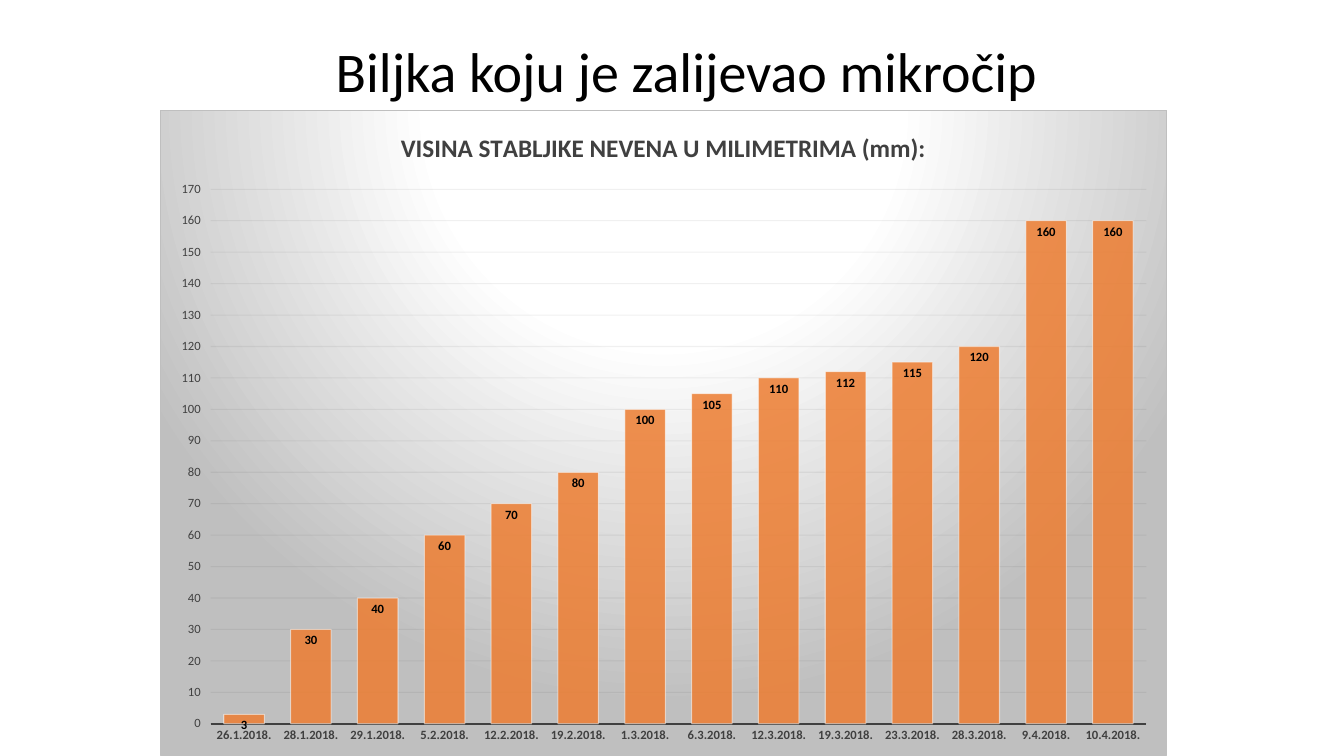
"""Build a slide with a column chart of marigold stem height by date."""
from lxml import etree
from pptx import Presentation, util as u
from pptx.chart.data import CategoryChartData
from pptx.dml.color import RGBColor
from pptx.enum import chart as ch, text
from pptx.oxml import parse_xml
from pptx.oxml.ns import nsdecls, qn

COLORS = {"ink": "000000", "label": "404040", "grid": "0D0D0D", "bar": "ED7D31",
          "white": "FFFFFF", "grey": "BFBFBF"}
HEIGHTS = {"26.1.2018.": 3, "28.1.2018.": 30, "29.1.2018.": 40, "5.2.2018.": 60,
           "12.2.2018.": 70, "19.2.2018.": 80, "1.3.2018.": 100, "6.3.2018.": 105,
           "12.3.2018.": 110, "19.3.2018.": 112, "23.3.2018.": 115, "28.3.2018.": 120,
           "9.4.2018.": 160, "10.4.2018.": 160}


class Deck:
    """Style and current slide, with lengths given as percentages of the slide."""

    def __init__(self, font):
        self.font = font
        self.prs = Presentation()
        self.prs.slide_width, self.prs.slide_height = u.Inches(13.33), u.Inches(7.5)
        self.slide = self.prs.slides.add_slide(self.prs.slide_layouts[5])

    def box(self, *percents):
        sides = (self.prs.slide_width, self.prs.slide_height) * 2
        return [int(side * percent / 100) for side, percent in zip(sides, percents)]

    def style(self, font, size, color, bold=False):
        font.name, font.size, font.bold = self.font, u.Pt(size), bold
        font.color.rgb = RGBColor.from_string(COLORS[color])

    def stroke(self, line, color, width):
        line.color.rgb = RGBColor.from_string(COLORS[color])
        line.width = u.Pt(width)

    def fade(self, owner, *percents):
        for color, percent in zip(owner.xpath("c:spPr//a:srgbClr"), percents):
            etree.SubElement(color, qn("a:alpha")).set("val", str(percent * 1000))

    def place(self, part, index, inner=False, **percents):
        for previous in part.findall(qn("c:layout")):
            part.remove(previous)
        target = '<c:layoutTarget val="inner"/>' if inner else ""
        modes = "".join(f'<c:{axis}Mode val="edge"/>' for axis in "xy")
        values = "".join(f'<c:{key} val="{percent / 100}"/>'
                         for key, percent in percents.items())
        part.insert(index, parse_xml(
            f'<c:layout {nsdecls("c")}><c:manualLayout>{target}{modes}{values}'
            '</c:manualLayout></c:layout>'))

    def title(self, wording, *percents):
        heading = self.slide.shapes.title
        heading.left, heading.top, heading.width, heading.height = self.box(*percents)
        frame = heading.text_frame
        frame.text, frame.word_wrap = wording, True
        frame.auto_size = text.MSO_AUTO_SIZE.NONE
        frame.vertical_anchor = text.MSO_ANCHOR.TOP
        frame.paragraphs[0].alignment = text.PP_ALIGN.LEFT
        self.style(frame.paragraphs[0].font, 40, "ink")

    def backdrop(self, chart):
        stops = "".join(f'<a:gs pos="{at * 1000}"><a:srgbClr val="{COLORS[key]}"/></a:gs>'
                        for at, key in ((0, "white"), (39, "white"), (100, "grey")))
        root = chart._chartSpace
        root.find(qn("c:chart")).addnext(parse_xml(
            f'<c:spPr {nsdecls("c", "a")}><a:gradFill><a:gsLst>{stops}</a:gsLst>'
            '<a:path path="circle"><a:fillToRect l="50000" t="-80000" r="50000" b="180000"/>'
            '</a:path></a:gradFill><a:ln w="9525"><a:solidFill>'
            f'<a:srgbClr val="{COLORS["grey"]}"/></a:solidFill></a:ln></c:spPr>'))
        for previous in root.findall(qn("c:roundedCorners")):
            root.remove(previous)
        root.find(qn("c:chart")).addprevious(
            parse_xml(f'<c:roundedCorners {nsdecls("c")} val="0"/>'))

    def columns(self, caption, heights, *percents):
        data = CategoryChartData()
        data.categories = list(heights)
        data.add_series("Series 1", list(heights.values()))
        chart = self.slide.shapes.add_chart(
            ch.XL_CHART_TYPE.COLUMN_CLUSTERED, *self.box(*percents), data).chart
        self.style(chart.font, 10, "label")
        chart.has_legend, chart.has_title = False, True
        heading = chart.chart_title.text_frame
        heading.text = caption
        self.style(heading.paragraphs[0].font, 18, "label", True)
        self.place(chart.chart_title._element, 1, x=23.4, y=2.4)
        self.place(chart._chartSpace.find(".//" + qn("c:plotArea")), 0, True,
                   x=4.95, y=12.25, w=93, h=82.85)
        self.backdrop(chart)
        self.axes(chart)
        self.bars(chart.plots[0])

    def axes(self, chart):
        dates, scale = chart.category_axis, chart.value_axis
        dates.major_tick_mark = ch.XL_TICK_MARK.NONE
        self.style(dates.tick_labels.font, 9, "label", True)
        self.stroke(dates.format.line, "label", 1.5)
        scale.minimum_scale, scale.maximum_scale, scale.major_unit = 0, 170, 10
        self.style(scale.tick_labels.font, 9, "label")
        scale.format.line.fill.background()
        self.stroke(scale.major_gridlines.format.line, "grid", 0.75)
        self.fade(scale._element.find(qn("c:majorGridlines")), 6)

    def bars(self, plot):
        plot.gap_width, plot.vary_by_categories = 65, False
        series = plot.series[0]
        series.format.fill.solid()
        series.format.fill.fore_color.rgb = RGBColor.from_string(COLORS["bar"])
        self.stroke(series.format.line, "white", 0.75)
        self.fade(series._element, 85, 50)
        labels = series.data_labels
        labels.show_value = True
        labels.position = ch.XL_LABEL_POSITION.INSIDE_END
        self.style(labels.font, 9, "ink", True)


def main():
    deck = Deck("Calibri")
    deck.columns("VISINA STABLJIKE NEVENA U MILIMETRIMA (mm):", HEIGHTS,
                 11.93, 14.53, 74.94, 85.47)
    deck.title("Biljka koju je zalijevao mikročip", 24.23, 4.13, 59.49, 10.27)
    deck.prs.save("out.pptx")


if __name__ == "__main__":
    main()
